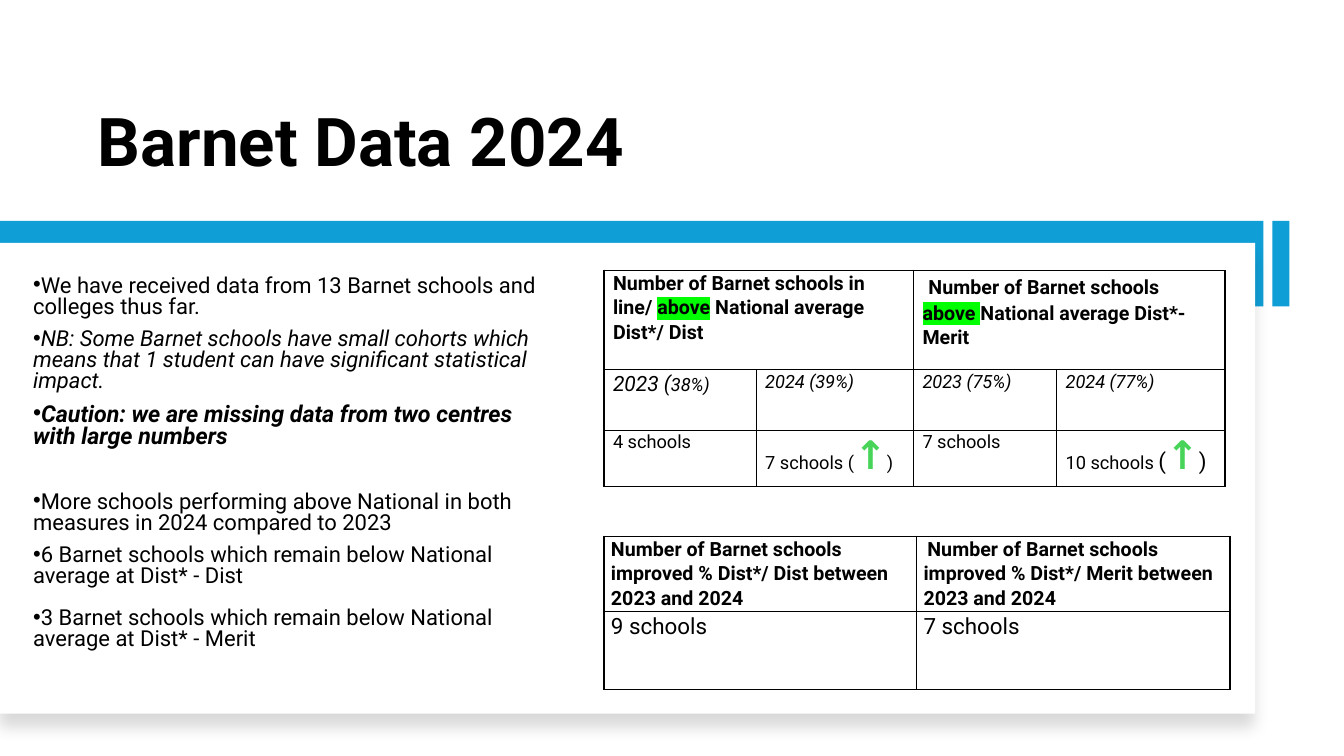
import pptx
import pptx.util
import pptx.dml.color
import pptx.enum.shapes
import pptx.enum.text
import pptx.oxml
import pptx.oxml.ns
from lxml import etree

Inches, Pt = pptx.util.Inches, pptx.util.Pt
qn = pptx.oxml.ns.qn
BLACK, BLUE, GREEN, LIME = "000000", "0F9ED5", "47D459", "00FF00"


def color(value):
    return pptx.dml.color.RGBColor.from_string(value)


def add_runs(p, runs):
    """Add (text, size, style, colour) runs; style letters: b bold, i italic, h highlight."""
    for text, size, style, ink in runs:
        r = p.add_run()
        r.text = text
        r.font.name = "Roboto"
        r.font.size = Pt(size)
        r.font.bold = "b" in style
        r.font.italic = "i" in style
        r.font.color.rgb = color(ink)
        if "h" in style:
            highlight = etree.Element(qn("a:highlight"))
            etree.SubElement(highlight, qn("a:srgbClr"), val=LIME)
            r.font._element.find(qn("a:solidFill")).addnext(highlight)


prs = pptx.Presentation()
prs.slide_width, prs.slide_height = Inches(13.33), Inches(7.5)
s = prs.slides.add_slide(prs.slide_layouts[6])

# Blue band, white card and blue accent
bars = []
for x, y, w, h, fill in [
    (0, 2.19, 12.53, 0.85, BLUE),
    (0, 2.41, 12.45, 4.67, "FFFFFF"),
    (12.62, 2.19, 0.17, 0.85, BLUE),
]:
    sp = s.shapes.add_shape(pptx.enum.shapes.MSO_SHAPE.RECTANGLE,
                            Inches(x), Inches(y), Inches(w), Inches(h))
    sp.fill.solid()
    sp.fill.fore_color.rgb = color(fill)
    sp.line.fill.background()
    sp.shadow.inherit = False
    bars.append(sp)

card = bars[1]
effects = card._element.spPr.find(qn("a:effectLst"))
shadow = etree.SubElement(effects, qn("a:outerShdw"), blurRad=str(Pt(11)), dist=str(Pt(10)),
                          dir="5400000", algn="t", rotWithShape="0")
shade = etree.SubElement(shadow, qn("a:srgbClr"), val=BLACK)
etree.SubElement(shade, qn("a:alpha"), val="15000")

# Title
title = s.shapes.add_textbox(Inches(0.87), Inches(0.42), Inches(11.01), Inches(1.42))
tf = title.text_frame
tf.word_wrap = True
tf.vertical_anchor = pptx.enum.text.MSO_ANCHOR.BOTTOM
p = tf.paragraphs[0]
p.line_spacing, p.space_after = 0.9, Pt(6)
add_runs(p, [("Barnet Data 2024", 48, "b", BLACK)])

# Findings: text, size, style, space after
findings = [
    ("We have received data from 13 Barnet schools and colleges thus far.", 15.7, "", 8),
    ("NB: Some Barnet schools have small cohorts which means that 1 student can have "
     "significant statistical impact.", 15.7, "i", 8),
    ("Caution: we are missing data from two centres with large numbers", 16.6, "bi", 31),
    ("More schools performing above National in both measures in 2024 compared to 2023",
     15.7, "", 8),
    ("6 Barnet schools which remain below National average at Dist* - Dist", 15.7, "", 15),
    ("3 Barnet schools which remain below National average at Dist* - Merit", 15.7, "", 0),
]
box = s.shapes.add_textbox(Inches(0.23), Inches(2.61), Inches(5.32), Inches(3.98))
tf = box.text_frame
tf.word_wrap = True
tf.vertical_anchor = pptx.enum.text.MSO_ANCHOR.MIDDLE
for i, (text, size, style, after) in enumerate(findings):
    p = tf.add_paragraph() if i else tf.paragraphs[0]
    p.line_spacing, p.space_after = 0.8, Pt(after)
    add_runs(p, [(text, size, style, BLACK)])
    pPr = p._p.get_or_add_pPr()
    pPr.set("marL", "0")
    pPr.set("indent", str(Inches(-0.25)))
    etree.SubElement(pPr, qn("a:buFont"), typeface="Arial")
    etree.SubElement(pPr, qn("a:buChar"), char="•")

# Tables: a cell is a list of runs, None is covered by the cell to its left
averages = [
    [[("Number of Barnet schools in line/ ", 14, "b", BLACK), ("above", 14, "bh", BLACK),
      (" National average Dist*/ Dist", 14, "b", BLACK)],
     None,
     [(" ", 17, "b", BLACK), ("Number of Barnet schools ", 14, "b", BLACK),
      ("above ", 14, "bh", BLACK), ("National average Dist*- Merit", 14, "b", BLACK)],
     None],
    [[("2023 (", 15, "i", BLACK), ("38%)", 13, "i", BLACK)],
     [("2024 (39%)", 13, "i", BLACK)],
     [("2023 (75%)", 13, "i", BLACK)],
     [("2024 (77%)", 13, "i", BLACK)]],
    [[("4 schools", 13, "", BLACK)],
     [("7 schools (", 13, "", BLACK), ("↑", 28, "b", GREEN), (")", 13, "", BLACK)],
     [("7 schools", 13, "", BLACK)],
     [("10 schools ", 13, "", BLACK), ("(", 16, "", BLACK), ("↑", 28, "b", GREEN),
      (")", 16, "", BLACK)]],
]
improved = [
    [[("Number of Barnet schools improved % Dist*/ Dist between 2023 and 2024", 14, "b", BLACK)],
     [(" ", 11, "b", BLACK),
      ("Number of Barnet schools improved % Dist*/ Merit between 2023 and 2024", 14, "b", BLACK)]],
    [[("9 schools", 16, "", BLACK)], [("7 schools", 16, "", BLACK)]],
]
for top, widths, heights, margin, rows in [
    (2.68, [1.51, 1.56, 1.42, 1.67], [0.99, 0.6, 0.56], 0.09, averages),
    (5.32, [3.1, 3.11], [0.74, 0.77], 0.07, improved),
]:
    table = s.shapes.add_table(len(heights), len(widths), Inches(5.99), Inches(top),
                               Inches(sum(widths)), Inches(sum(heights))).table
    table.first_row = table.horz_banding = False
    for column, width in zip(table.columns, widths):
        column.width = Inches(width)
    for row, height in zip(table.rows, heights):
        row.height = Inches(height)
    for i, row in enumerate(rows):
        for j, runs in enumerate(row):
            cell = table.cell(i, j)
            cell.margin_left = cell.margin_right = Inches(margin)
            cell.margin_top = cell.margin_bottom = 0
            tcPr = cell._tc.get_or_add_tcPr()
            for side in ("a:lnL", "a:lnR", "a:lnT", "a:lnB"):
                ln = etree.SubElement(tcPr, qn(side), w=str(Pt(1)))
                etree.SubElement(etree.SubElement(ln, qn("a:solidFill")), qn("a:srgbClr"), val=BLACK)
            cell.fill.background()
            if runs is None:
                table.cell(i, j - 1).merge(cell)
                continue
            p = cell.text_frame.paragraphs[0]
            p.line_spacing, p.space_after = 1.07, Pt(8)
            add_runs(p, runs)

prs.save("out.pptx")
